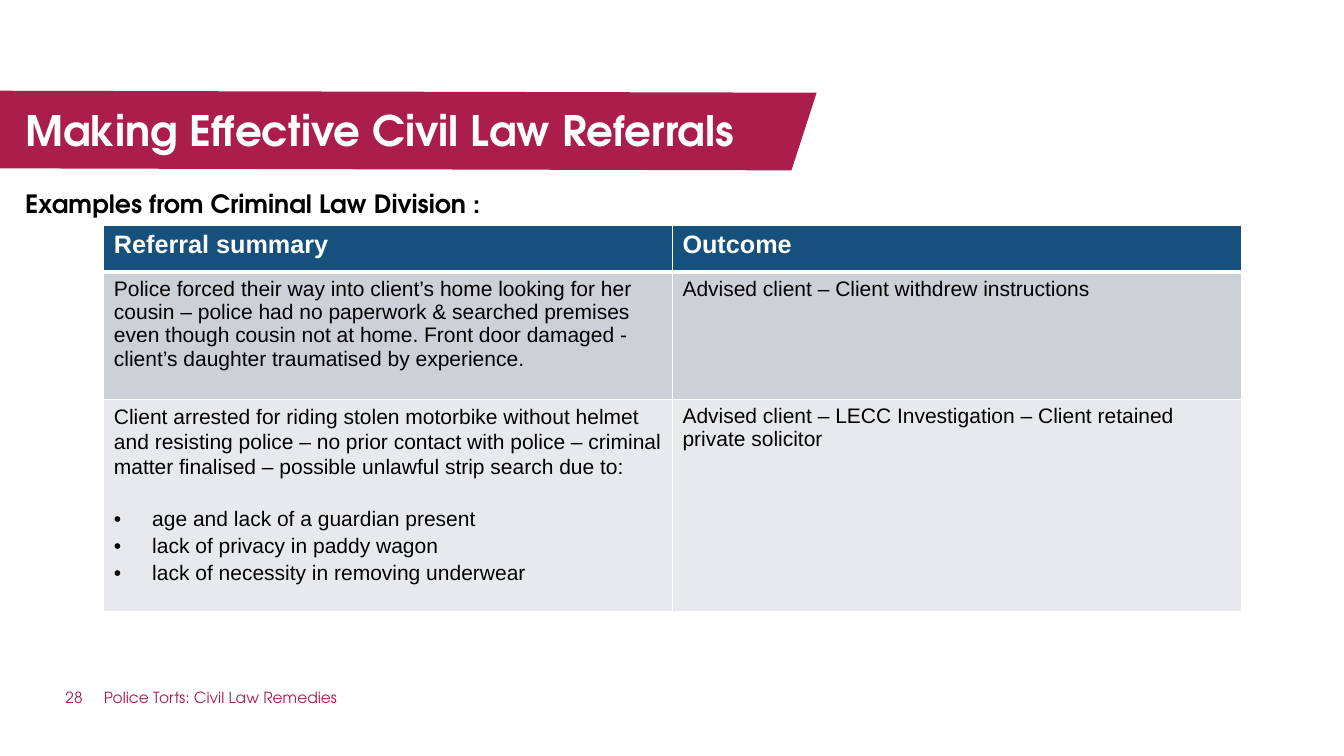
import pptx
import pptx.util
import pptx.dml.color
import pptx.enum.text
import pptx.oxml
import pptx.oxml.ns

Inches = pptx.util.Inches
Pt = pptx.util.Pt
RGBColor = pptx.dml.color.RGBColor

RED = RGBColor(0xAB, 0x1E, 0x4B)
BLUE = RGBColor(0x16, 0x51, 0x7D)
GREY = RGBColor(0xCC, 0xD0, 0xD7)
PALE = RGBColor(0xE8, 0xE9, 0xEC)
WHITE = RGBColor(0xFF, 0xFF, 0xFF)
BLACK = RGBColor(0, 0, 0)
HEAD = "TeX Gyre Adventor"
BODY = "Arial"

TITLE = "Making Effective Civil Law Referrals"
INTRO = "Examples from Criminal Law Division :"
NUMBER = "28"
FOOTER = "Police Torts: Civil Law Remedies"
BANNER = [(0, 0.9), (8.1, 0.92), (7.85, 1.69), (0, 1.67)]

ROWS = [
    (0.46, BLUE, [["Referral summary"], ["Outcome"]]),
    (1.26, GREY, [
        ["Police forced their way into client’s home looking for her cousin – "
         "police had no paperwork & searched premises even though cousin not at "
         "home. Front door damaged - client’s daughter traumatised by experience."],
        ["Advised client – Client withdrew instructions"],
    ]),
    (2.11, PALE, [
        ["Client arrested for riding stolen motorbike without helmet and "
         "resisting police – no prior contact with police – criminal matter "
         "finalised – possible unlawful strip search due to:",
         "age and lack of a guardian present",
         "lack of privacy in paddy wagon",
         "lack of necessity in removing underwear"],
        ["Advised client – LECC Investigation – Client retained private solicitor"],
    ]),
]


def write(para, text, face, size, color, bold=False):
    run = para.add_run()
    run.text = text
    font = run.font
    font.name, font.size, font.bold = face, Pt(size), bold
    font.color.rgb = color


def add_xml(node, tag, inner="", **attrs):
    pairs = "".join(f' {key}="{val}"' for key, val in attrs.items())
    space = pptx.oxml.ns.nsdecls("a")
    node.append(pptx.oxml.parse_xml(f"<a:{tag} {space}{pairs}>{inner}</a:{tag}>"))


def place(shape, box, text, size, color, bold=False):
    shape.left, shape.top, shape.width, shape.height = map(Inches, box)
    frame = shape.text_frame
    frame.margin_left = frame.margin_right = 0
    frame.margin_top = frame.margin_bottom = 0
    frame.word_wrap = True
    frame.auto_size = pptx.enum.text.MSO_AUTO_SIZE.NONE
    frame.vertical_anchor = pptx.enum.text.MSO_ANCHOR.TOP
    para = frame.paragraphs[0]
    para.alignment = pptx.enum.text.PP_ALIGN.LEFT
    para.space_before = Pt(0)
    write(para, text, HEAD, size, color, bold)
    return para


def add_banner(slide):
    points = [(Inches(x), Inches(y)) for x, y in BANNER]
    build = slide.shapes.build_freeform(*points[0])
    build.add_line_segments(points[1:], close=True)
    shape = build.convert_to_shape()
    shape.shadow.inherit = False
    shape.fill.solid()
    shape.fill.fore_color.rgb = RED
    shape.line.fill.background()


def fill_cell(cell, lines, color, head):
    props = cell._tc.get_or_add_tcPr()
    ink = f'<a:solidFill><a:srgbClr val="{WHITE}"/></a:solidFill>'
    for side in ("lnL", "lnR", "lnT", "lnB"):
        thick = head and side == "lnB"
        add_xml(props, side, ink, w=Pt(3 if thick else 1))
    cell.fill.solid()
    cell.fill.fore_color.rgb = color
    frame = cell.text_frame
    for num, line in enumerate(lines):
        para = frame.add_paragraph() if num else frame.paragraphs[0]
        if num:
            props = para._p.get_or_add_pPr()
            props.set("marL", str(Inches(0.38)))
            props.set("indent", str(-Inches(0.38)))
            para.line_spacing = 1.15
            add_xml(props, "buFont", typeface=BODY)
            add_xml(props, "buChar", char="•")
        elif len(lines) > 1:
            para.line_spacing = 1.07
            para.space_after = Pt(18)
        write(para, line, BODY, 18 if head else 15, WHITE if head else BLACK, head)


def add_grid(slide):
    high = sum(row[0] for row in ROWS)
    frame = slide.shapes.add_table(
        len(ROWS), 2, Inches(1.03), Inches(2.24), Inches(11.28), Inches(high))
    grid = frame.table
    grid.horz_banding = False
    for num, (high, color, cells) in enumerate(ROWS):
        grid.rows[num].height = Inches(high)
        for col, lines in enumerate(cells):
            fill_cell(grid.cell(num, col), lines, color, num == 0)


def main():
    deck = pptx.Presentation()
    deck.slide_width, deck.slide_height = Inches(13.33), Inches(7.5)
    slide = deck.slides.add_slide(deck.slide_layouts[1])
    title, body = slide.placeholders
    add_banner(slide)
    tree = slide.shapes._spTree
    tree.insert(2, slide.shapes[-1]._element)

    place(title, (0.25, 1.04, 7.55, 0.49), TITLE, 30, WHITE, True)
    para = place(body, (0.25, 1.81, 10.87, 3.67), INTRO, 18, BLACK, True)
    para.line_spacing = 1.2
    para.space_after = Pt(2)
    props = para._p.get_or_add_pPr()
    props.set("marL", "0")
    props.set("indent", "0")
    add_xml(props, "buNone")

    for left, wide, text in ((0.65, 0.37, NUMBER), (1.03, 6.14, FOOTER)):
        box = slide.shapes.add_textbox(0, 0, 0, 0)
        place(box, (left, 6.83, wide, 0.35), text, 11, RED)
    add_grid(slide)
    deck.save("out.pptx")


if __name__ == "__main__":
    main()
